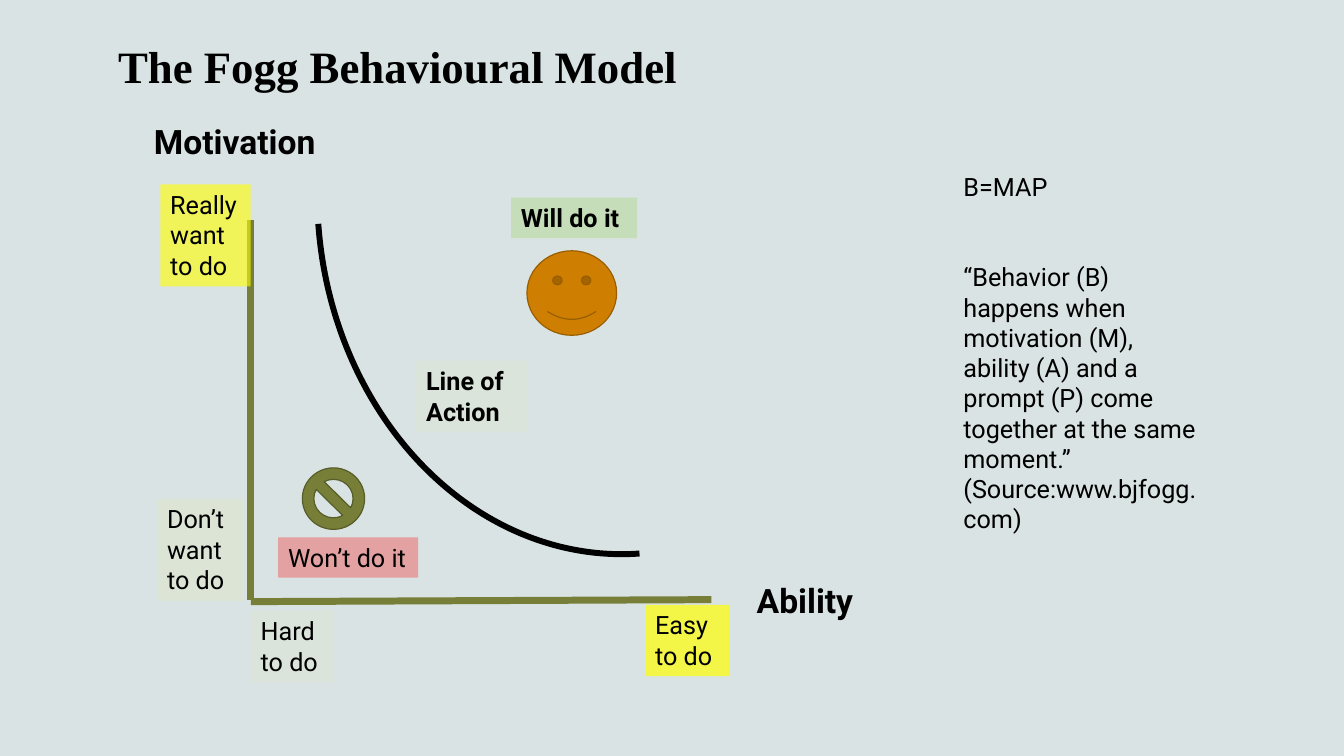
from lxml.etree import SubElement
from pptx import Presentation
from pptx.dml.color import RGBColor
from pptx.enum.shapes import MSO_CONNECTOR, MSO_SHAPE
from pptx.enum.text import MSO_ANCHOR, MSO_AUTO_SIZE, PP_ALIGN
from pptx.oxml.ns import qn
from pptx.util import Cm, Pt

BLACK, OLIVE, YELLOW = "000000", "767E37", "FFFF00"


def paint(color, code):
    color.rgb = RGBColor.from_string(code)


def style(para, size, bold=False, name="Roboto"):
    para.alignment = PP_ALIGN.LEFT
    font = para.font
    font.size, font.bold, font.name = Pt(size), bold, name
    paint(font.color, BLACK)


def add_title(slide, box, text):
    title = slide.shapes.title
    title.left, title.top, title.width, title.height = map(Cm, box)
    frame = title.text_frame
    frame.text = text
    frame.auto_size = MSO_AUTO_SIZE.NONE
    frame.vertical_anchor = MSO_ANCHOR.BOTTOM
    style(frame.paragraphs[0], 32, True, "Times New Roman")


def add_text(slide, box, text, size=18, bold=False):
    label = slide.shapes.add_textbox(*map(Cm, box))
    frame = label.text_frame
    frame.word_wrap = True
    frame.text = text
    for para in frame.paragraphs:
        style(para, size, bold)
    return label


def add_tag(slide, box, text, code, alpha, bold=False):
    tag = add_text(slide, box, text, bold=bold)
    tag.fill.solid()
    paint(tag.fill.fore_color, code)
    clr = tag.fill._xPr.find(".//" + qn("a:srgbClr"))
    SubElement(clr, qn("a:alpha"), val=str(alpha * 1000))


def add_axis(slide, start, end):
    axis = slide.shapes.add_connector(
        MSO_CONNECTOR.STRAIGHT, *map(Cm, start + end))
    axis.line.width = Pt(5)
    paint(axis.line.color, OLIVE)
    SubElement(axis._element.spPr, qn("a:effectLst"))


def add_form(slide, kind, box, fill, line, width):
    form = slide.shapes.add_shape(kind, *map(Cm, box))
    form.shadow.inherit = False
    if fill:
        form.fill.solid()
        paint(form.fill.fore_color, fill)
    else:
        form.fill.background()
    form.line.width = Pt(width)
    paint(form.line.color, line)
    return form


def add_graph(slide, left, top, width, height):
    def place(x, y, w, h):
        return left + x, top + y, w, h

    # Axes and their names
    base = top + height
    add_axis(slide, (left, top), (left, base - 0.03))
    add_axis(slide, (left, base + 0.02), (left + width, base - 0.03))
    add_text(slide, place(-2.69, -2.62, 4.78, 1.27), "Motivation", 24, True)
    add_text(slide, place(12.5, 8.94, 3.12, 1.27), "Ability", 24, True)

    # Line of action
    curve = add_form(slide, MSO_SHAPE.ARC, place(1.68, -9.3, 14.96, 17.73),
                     None, BLACK, 4.25)
    curve.rotation = 175.9

    # Outcome signs
    add_form(slide, MSO_SHAPE.NO_SYMBOL, place(1.3, 6.25, 1.57, 1.55),
             OLIVE, "575D29", 0.85)
    add_form(slide, MSO_SHAPE.SMILEY_FACE, place(6.96, 0.78, 2.26, 2.13),
             "CE7F01", "985E01", 0.85)

    # Tags: offset and size, text, colour, opacity in percent, bold
    tags = [
        ((0, 9.85, 2.08, 1.8), "Hard\vto do", YELLOW, 4, False),
        ((9.94, 9.7, 2.11, 1.8), "Easy\vto do", YELLOW, 69, False),
        ((-2.36, 7.03, 2.18, 2.57), "Don’t\vwant\vto do", YELLOW, 6, False),
        ((-2.28, -0.89, 2.28, 2.57), "Really\vwant\vto do", YELLOW, 61, False),
        ((4.17, 3.55, 2.79, 1.8), "Line of\vAction", YELLOW, 4, True),
        ((0.69, 8, 3.53, 1.02), "Won’t do it", "FF0000", 29, False),
        ((6.56, -0.56, 3.18, 1.02), "Will do it", "92D050", 29, True),
    ]
    for spot, *rest in tags:
        add_tag(slide, place(*spot), *rest)


def add_quote(slide, box):
    quote = add_text(
        slide, box,
        "B=MAP\n“Behavior (B) happens when motivation (M), ability (A) and "
        "a prompt (P) come together at the same moment.” "
        "(Source:www.bjfogg.com)")
    quote.text_frame.paragraphs[1].space_before = Pt(43)


def main():
    deck = Presentation()
    deck.slide_width, deck.slide_height = Cm(33.87), Cm(19.05)
    slide = deck.slides.add_slide(deck.slide_layouts[5])
    back = slide.background.fill
    back.solid()
    paint(back.fore_color, "DAE3E3")

    add_title(slide, (2.72, 0.2, 29.21, 2.26), "The Fogg Behavioural Model")
    add_quote(slide, (24.03, 4.19, 6.6, 8.71))
    add_graph(slide, 6.32, 5.54, 11.61, 9.6)
    deck.save("out.pptx")


if __name__ == "__main__":
    main()
